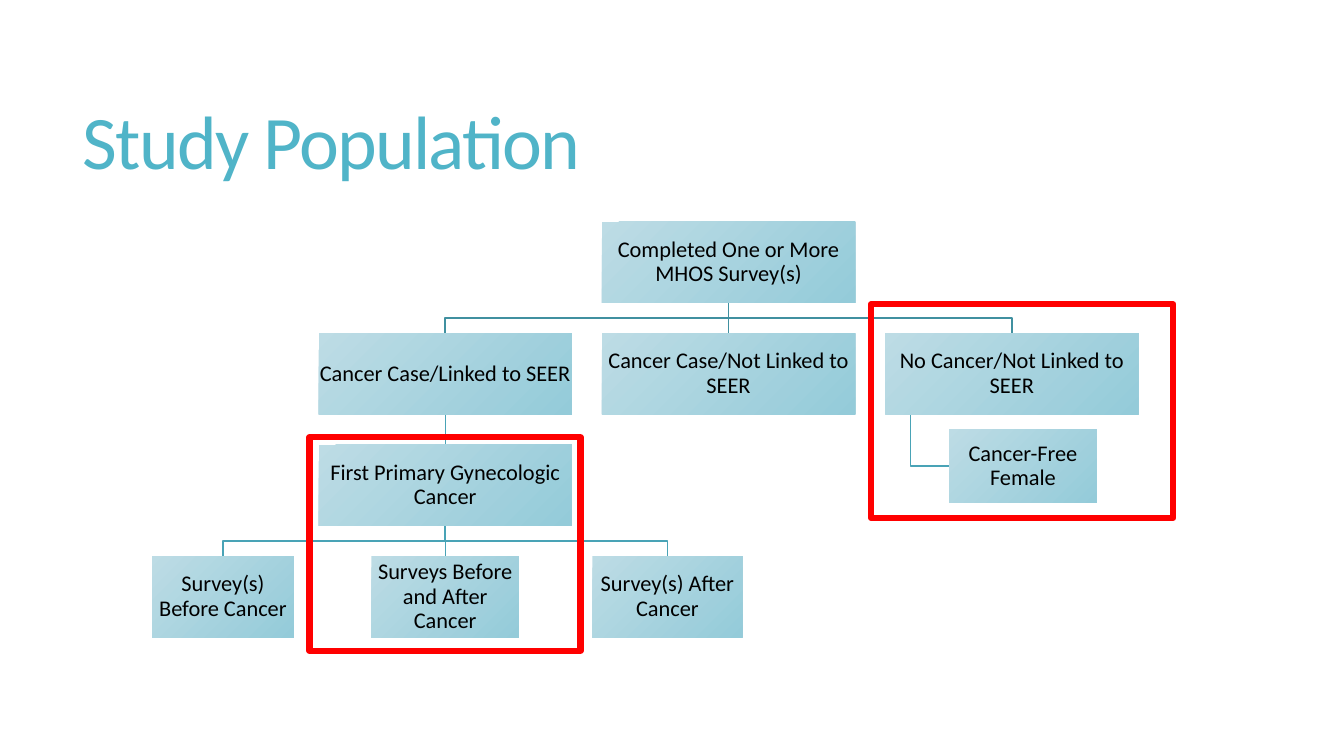
import pptx
import pptx.util
import pptx.dml.color
import pptx.enum.shapes
import pptx.enum.text
import pptx.oxml.ns
import lxml.etree
from dataclasses import dataclass

Cm, Pt = pptx.util.Cm, pptx.util.Pt
RGB = pptx.dml.color.RGBColor.from_string
MIDDLE = pptx.enum.text.MSO_ANCHOR.MIDDLE
CENTER = pptx.enum.text.PP_ALIGN.CENTER
RECT = pptx.enum.shapes.MSO_SHAPE.RECTANGLE
STRAIGHT = pptx.enum.shapes.MSO_CONNECTOR.STRAIGHT
qn = pptx.oxml.ns.qn


@dataclass(frozen=True)
class Theme:
    font: str = "Calibri"
    title: str = "50B4C8"
    text: str = "000000"
    box_fill: tuple = ("BDDCE5", "94CBD9")
    top_link: str = "4090A0"
    low_link: str = "49A3B6"
    frame: str = "FF0000"
    title_size: float = 54
    box_size: float = 16
    link_width: float = 1
    frame_width: float = 4.5


THEME = Theme()

# Boxes: text, centre x, top, width, height (cm within the chart)
COLUMNS = [7.36 + 7.14 * i for i in range(3)]
ROWS = [2.81 * i for i in range(4)]
SURVEYS = [COLUMNS[0] + 5.6 * i for i in (-1, 0, 1)]
WIDE, TALL = 6.38, 2.04
BOXES = {
    "all": ("Completed One or More MHOS Survey(s)", COLUMNS[1], ROWS[0], WIDE, TALL),
    "linked": ("Cancer Case/Linked to SEER", COLUMNS[0], ROWS[1], WIDE, TALL),
    "unlinked": ("Cancer Case/Not Linked to SEER", COLUMNS[1], ROWS[1], WIDE, TALL),
    "no_cancer": ("No Cancer/Not Linked to SEER", COLUMNS[2], ROWS[1], WIDE, TALL),
    "primary": ("First Primary Gynecologic Cancer", COLUMNS[0], ROWS[2], WIDE, TALL),
    "before": ("Survey(s) Before Cancer", SURVEYS[0], ROWS[3], 3.57, TALL),
    "both": ("Surveys Before and After Cancer", SURVEYS[1], ROWS[3], 3.72, TALL),
    "after": ("Survey(s) After Cancer", SURVEYS[2], ROWS[3], 3.78, TALL),
    "free": ("Cancer-Free Female", 21.92, 5.23, 3.72, 1.85),
}
LINKS = {
    "all": (THEME.top_link, ("linked", "unlinked", "no_cancer")),
    "linked": (THEME.low_link, ("primary",)),
    "primary": (THEME.low_link, ("before", "both", "after")),
}


def apply(obj, values):
    for name, value in values.items():
        setattr(obj, name, value)


def write(sp, text, size, color, para, frame):
    tf = sp.text_frame
    apply(tf, {"word_wrap": True, "vertical_anchor": MIDDLE, **frame})
    p = tf.paragraphs[0]
    apply(p, para)
    r = p.add_run()
    r.text = text
    apply(r.font, {"name": THEME.font, "size": Pt(size)})
    r.font.color.rgb = RGB(color)
    return r


def add_title(slide, x, y, w, h):
    sp = slide.shapes.add_textbox(Cm(x), Cm(y), Cm(w), Cm(h))
    r = write(sp, "Study Population", THEME.title_size, THEME.title,
              {"line_spacing": 0.85}, {})
    r._r.get_or_add_rPr().set("spc", "-120")


def add_link(slide, points, color):
    points = [(Cm(px), Cm(py)) for px, py in points]
    if len(points) == 2:
        sp = slide.shapes.add_connector(STRAIGHT, *points[0], *points[1])
        lxml.etree.SubElement(sp._element.spPr, qn("a:effectLst"))
    else:
        fb = slide.shapes.build_freeform(*points[0])
        fb.add_line_segments(points[1:], close=False)
        sp = fb.convert_to_shape()
        sp.fill.background()
        sp.shadow.inherit = False
    sp.line.color.rgb = RGB(color)
    sp.line.width = Pt(THEME.link_width)


def add_box(slide, text, x, y, w, h):
    sp = slide.shapes.add_shape(RECT, Cm(x), Cm(y), Cm(w), Cm(h))
    sp.shadow.inherit = False
    sp.line.fill.background()
    sp.fill.gradient()
    sp.fill.gradient_angle = 315
    for stop, color in zip(sp.fill.gradient_stops, THEME.box_fill):
        stop.color.rgb = RGB(color)
    inset = Cm(0.03)
    write(sp, text, THEME.box_size, THEME.text,
          {"alignment": CENTER, "line_spacing": 0.9},
          {"margin_left": inset, "margin_right": inset,
           "margin_top": inset, "margin_bottom": inset})


def add_chart_tree(slide, x, y):
    # Links run from the parent's foot through the middle of the gap
    for parent, (color, children) in LINKS.items():
        _, px, top, _, height = BOXES[parent]
        foot = y + top + height
        for child in children:
            _, cx, head, _, _ = BOXES[child]
            mid = (foot + y + head) / 2
            points = [(x + px, foot), (x + cx, y + head)]
            if cx != px:
                points[1:1] = [(x + px, mid), (x + cx, mid)]
            add_link(slide, points, color)

    # Side link to the hanging box
    _, px, top, width, height = BOXES["no_cancer"]
    _, cx, head, child_width, child_height = BOXES["free"]
    stem, mid = x + px - 0.4 * width, y + head + child_height / 2
    add_link(slide, [(stem, y + top + height), (stem, mid),
                     (x + cx - child_width / 2, mid)], THEME.low_link)

    for text, cx, top, width, height in BOXES.values():
        add_box(slide, text, x + cx - width / 2, y + top, width, height)


def add_frame(slide, x, y, w, h):
    sp = slide.shapes.add_shape(RECT, Cm(x), Cm(y), Cm(w), Cm(h))
    sp.shadow.inherit = False
    sp.fill.background()
    sp.line.color.rgb = RGB(THEME.frame)
    sp.line.width = Pt(THEME.frame_width)
    lxml.etree.SubElement(sp.line._get_or_add_ln(), qn("a:round"))


def main():
    prs = pptx.Presentation()
    apply(prs, {"slide_width": Cm(33.87), "slide_height": Cm(19.05)})
    slide = prs.slides.add_slide(prs.slide_layouts[6])
    add_title(slide, 1.83, 1.4, 29.92, 4.6)
    add_chart_tree(slide, 3.86, 5.59)
    # Study groups
    add_frame(slide, 7.8, 11.02, 6.83, 5.38)
    add_frame(slide, 21.95, 7.67, 7.62, 5.38)
    prs.save("out.pptx")


if __name__ == "__main__":
    main()
